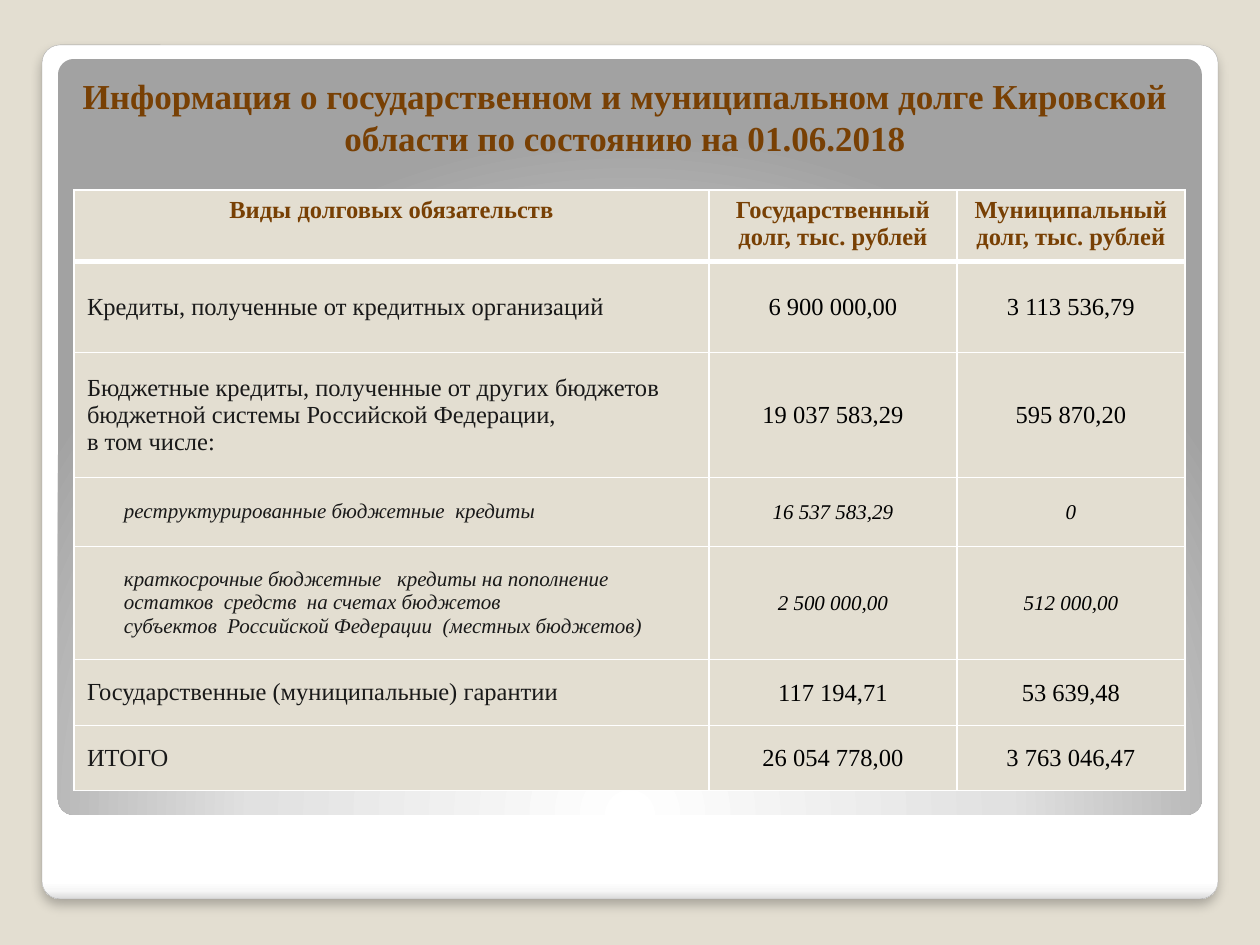
from pptx import Presentation
from pptx.dml.color import RGBColor
from pptx.enum.shapes import MSO_SHAPE as Shape
from pptx.enum.text import MSO_ANCHOR as Anchor, PP_ALIGN as Align
from pptx.oxml import parse_xml
from pptx.oxml.ns import nsdecls
from pptx.util import Pt

PX = 914400 / 126
FONT = "Times New Roman"
SAND, BROWN, INK, BLACK, WHITE = "E3DED1", "784004", "191919", "000000", "FFFFFF"

TITLE = ("Информация о государственном и муниципальном долге "
         "Кировской области по состоянию на 01.06.2018")
HEADER = ["Виды долговых обязательств", "Государственный долг, тыс. рублей",
          "Муниципальный долг, тыс. рублей"]
# Each row: height in px, whether it is a sub-item, then the three cells
ROWS = [
    (91, False, "Кредиты, полученные от кредитных организаций",
     "6 900 000,00", "3 113 536,79"),
    (125, False, "Бюджетные кредиты, полученные от других бюджетов бюджетной "
     "системы Российской Федерации,\nв том числе:",
     "19 037 583,29", "595 870,20"),
    (69, True, "реструктурированные бюджетные  кредиты", "16 537 583,29", "0"),
    (113, True, "краткосрочные бюджетные   кредиты на пополнение\n"
     "остатков  средств  на счетах бюджетов\n"
     "субъектов  Российской Федерации  (местных бюджетов)",
     "2 500 000,00", "512 000,00"),
    (66, False, "Государственные (муниципальные) гарантии",
     "117 194,71", "53 639,48"),
    (65, False, "ИТОГО", "26 054 778,00", "3 763 046,47"),
]


def px(length):
    return round(length * PX)


def color(value):
    return RGBColor.from_string(value)


def write(frame, text, size, ink, align=Align.LEFT, bold=False, italic=False):
    frame.word_wrap = True
    frame.text = text
    for para in frame.paragraphs:
        para.alignment = align
        font = para.font
        font.name, font.size, font.bold, font.italic = FONT, Pt(size), bold, italic
        font.color.rgb = color(ink)


def add_panel(page, box, stops, direction):
    """Rounded panel with a gradient; stops are (percent, colour)."""
    panel = page.shapes.add_shape(Shape.ROUNDED_RECTANGLE, *map(px, box))
    panel.adjustments[0] = 0.021
    panel.shadow.inherit = False
    panel.line.fill.background()
    marks = "".join(f'<a:gs pos="{at * 1000}"><a:srgbClr val="{tone}"/></a:gs>'
                    for at, tone in stops)
    gradient = parse_xml(f'<a:gradFill {nsdecls("a")} rotWithShape="1">'
                         f'<a:gsLst>{marks}</a:gsLst>{direction}</a:gradFill>')
    panel.element.spPr.insert(2, gradient)
    return panel


def add_frame(page, box):
    """White outer panel with its shadow, and the grey panel inside it."""
    left, top, width, height = box
    outer = add_panel(page, box, [(0, WHITE), (98, WHITE), (99, "F7F7F7"),
                                  (100, "DADADA")], '<a:lin ang="5400000" scaled="0"/>')
    outer.line.color.rgb = color("A4A4A4")
    outer.line.width = Pt(0.16)
    effects = outer.element.spPr.find("{*}effectLst")
    effects.append(parse_xml(
        f'<a:outerShdw {nsdecls("a")} blurRad="{Pt(6)}" dist="{Pt(4)}" dir="5400000" '
        'algn="tl" rotWithShape="0"><a:srgbClr val="000000"><a:alpha val="25000"/>'
        '</a:srgbClr></a:outerShdw>'))
    add_panel(page, (left + 16, top + 14, width - 32, height - 98),
              [(0, WHITE), (55, "E1E1E1"), (100, "A2A2A2")],
              '<a:path path="circle"><a:fillToRect l="50000" t="175000" '
              'r="50000" b="-75000"/></a:path>')


def add_title(page, box):
    frame = page.shapes.add_textbox(*map(px, box)).text_frame
    frame.vertical_anchor = Anchor.BOTTOM
    write(frame, TITLE, 20, BROWN, Align.CENTER, bold=True)


def style_cell(cell, top=1, bottom=1):
    """Sand fill and white borders; top and bottom are points."""
    cell.fill.solid()
    cell.fill.fore_color.rgb = color(SAND)
    sides = [("L", 1), ("R", 1), ("T", top), ("B", bottom)]
    for place, (side, width) in enumerate(sides):
        cell._tc.get_or_add_tcPr().insert(place, parse_xml(
            f'<a:ln{side} {nsdecls("a")} w="{Pt(width)}"><a:solidFill>'
            f'<a:srgbClr val="{WHITE}"/></a:solidFill></a:ln{side}>'))


def add_debt_table(page, left, top):
    widths = [635, 248, 228]
    heights = [69] + [row[0] for row in ROWS]
    table = page.shapes.add_table(len(heights), len(widths), px(left), px(top),
                                  px(sum(widths)), px(sum(heights))).table
    table.first_row = table.horz_banding = False
    for column, width in zip(table.columns, widths):
        column.width = px(width)
    for row, height in zip(table.rows, heights):
        row.height = px(height)

    # Heading row
    for column, text in enumerate(HEADER):
        cell = table.cell(0, column)
        style_cell(cell, bottom=3)
        write(cell.text_frame, text, 14, BROWN, Align.CENTER, bold=True)

    # Kinds of debt and their amounts
    for number, (_, is_sub, *texts) in enumerate(ROWS, 1):
        size = 12 if is_sub else 14
        for column, text in enumerate(texts):
            cell = table.cell(number, column)
            style_cell(cell, top=3 if number == 1 else 1)
            cell.vertical_anchor = Anchor.MIDDLE
            if column == 0:
                cell.margin_left = px(50 if is_sub else 13)
                write(cell.text_frame, text, size, INK, italic=is_sub)
            else:
                cell.margin_left = cell.margin_right = cell.margin_top = px(1)
                cell.margin_bottom = 0
                write(cell.text_frame, text, size, BLACK, Align.CENTER, italic=is_sub)


def main():
    deck = Presentation()
    deck.slide_width, deck.slide_height = px(1260), px(945)
    page = deck.slides.add_slide(deck.slide_layouts[6])
    page.background.fill.solid()
    page.background.fill.fore_color.rgb = color(SAND)
    add_frame(page, (42, 45, 1176, 854))
    add_title(page, (54, 55, 1142, 110))
    add_debt_table(page, 74, 190)
    deck.save("out.pptx")


if __name__ == "__main__":
    main()
